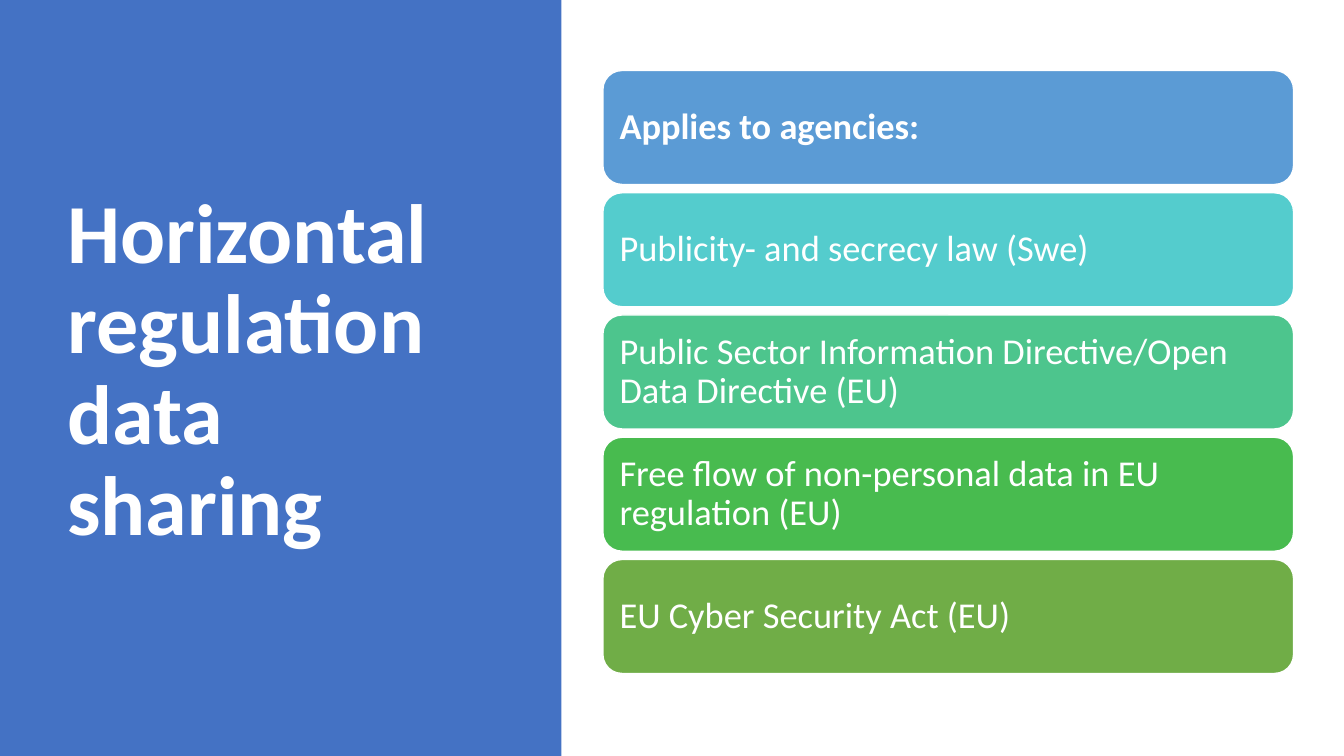
from dataclasses import dataclass

from pptx import Presentation
from pptx.dml.color import RGBColor
from pptx.enum.shapes import MSO_SHAPE
from pptx.enum.text import MSO_ANCHOR, PP_ALIGN
from pptx.slide import Slide
from pptx.util import Inches, Pt

WIDTH, HEIGHT = Inches(13.33), Inches(7.5)
COLORS = {
    "white": "FFFFFF",
    "panel": "4472C4",
    "blue": "5B9BD5",
    "turquoise": "54CCCD",
    "mint": "4DC58D",
    "green": "48BB4F",
    "olive": "70AD47",
}
RULES = [
    ("Applies to agencies:", "blue", True),
    ("Publicity- and secrecy law (Swe)", "turquoise", False),
    ("Public Sector Information Directive/Open Data Directive (EU)", "mint", False),
    ("Free flow of non-personal data in EU regulation (EU)", "green", False),
    ("EU Cyber Security Act (EU)", "olive", False),
]
FIRST_ROW, ROW_PITCH = 9.33, 16.17


@dataclass
class Canvas:
    """Draws styled elements on a slide, placed in percent of its size."""

    slide: Slide
    font: str = "Calibri"
    line_spacing: float = 0.9

    def place(self, left, top, width, height):
        return (
            int(WIDTH * left / 100),
            int(HEIGHT * top / 100),
            int(WIDTH * width / 100),
            int(HEIGHT * height / 100),
        )

    def block(self, kind, area, color, outline=None):
        block = self.slide.shapes.add_shape(kind, *self.place(*area))
        block.shadow.inherit = False
        block.fill.solid()
        block.fill.fore_color.rgb = RGBColor.from_string(COLORS[color])
        if outline:
            block.line.color.rgb = RGBColor.from_string(COLORS[outline])
            block.line.width = Pt(1)
        else:
            block.line.fill.background()
        return block

    def set_wording(self, frame, wording, size, bold):
        frame.word_wrap = True
        frame.vertical_anchor = MSO_ANCHOR.MIDDLE
        paragraph = frame.paragraphs[0]
        paragraph.alignment = PP_ALIGN.LEFT
        paragraph.line_spacing = self.line_spacing
        run = paragraph.add_run()
        run.text = wording
        run.font.name = self.font
        run.font.size = Pt(size)
        run.font.bold = bold
        run.font.color.rgb = RGBColor.from_string(COLORS["white"])

    def title(self, area, wording):
        heading = self.slide.shapes.add_textbox(*self.place(*area))
        self.set_wording(heading.text_frame, wording, 60, True)

    def card(self, area, wording, color, bold):
        card = self.block(MSO_SHAPE.ROUNDED_RECTANGLE, area, color, "white")
        frame = card.text_frame
        frame.margin_left = frame.margin_right = Inches(0.11)
        frame.margin_top = frame.margin_bottom = Inches(0.11)
        self.set_wording(frame, wording, 26, bold)


def main():
    deck = Presentation()
    deck.slide_width, deck.slide_height = WIDTH, HEIGHT
    canvas = Canvas(deck.slides.add_slide(deck.slide_layouts[6]))
    canvas.block(MSO_SHAPE.RECTANGLE, (0, 0, 41.78, 100), "panel")
    canvas.title((4.28, 9.07, 31.2, 80.27), "Horizontal regulation data sharing")
    for row, (wording, color, bold) in enumerate(RULES):
        area = (44.86, FIRST_ROW + row * ROW_PITCH, 51.39, 15.07)
        canvas.card(area, wording, color, bold)
    deck.save("out.pptx")


if __name__ == "__main__":
    main()
